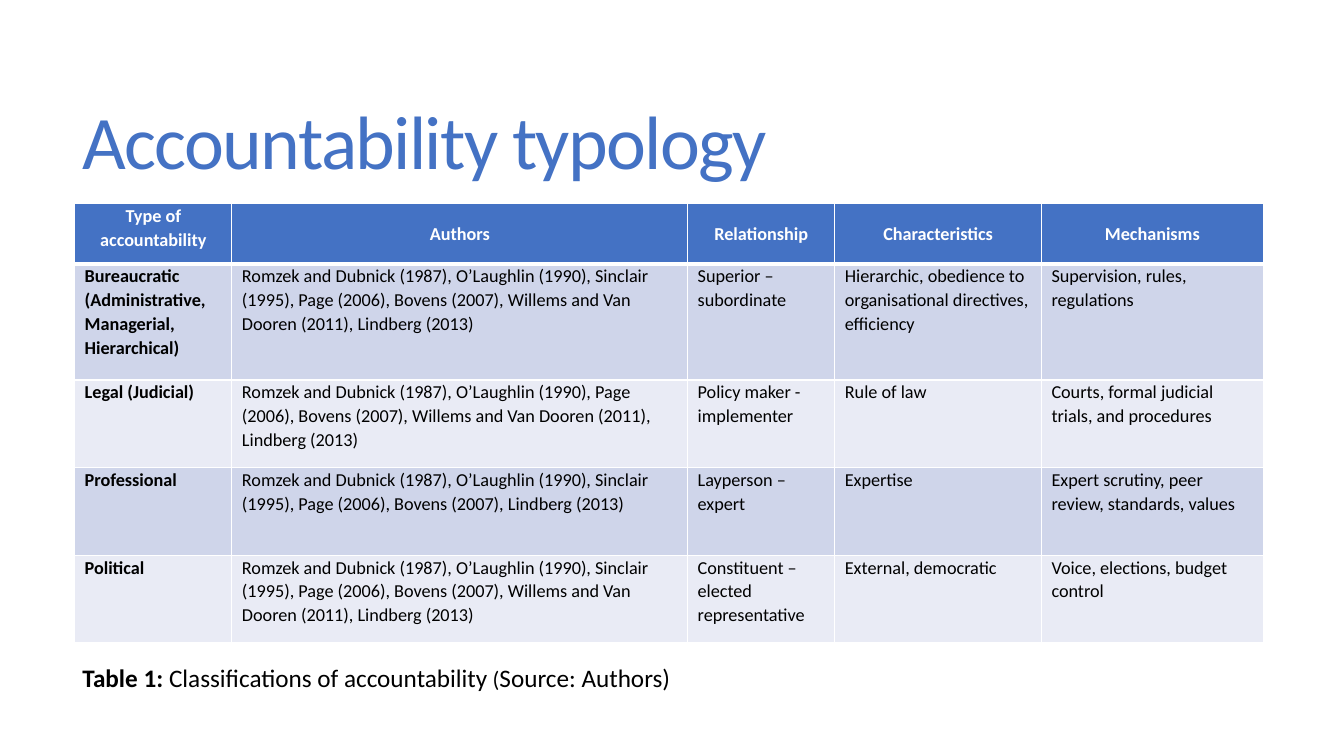
import pptx
import pptx.util
import pptx.dml.color
import pptx.enum.text
import pptx.oxml
import pptx.oxml.ns

Inches, Pt = pptx.util.Inches, pptx.util.Pt
Align, Anchor = pptx.enum.text.PP_ALIGN, pptx.enum.text.MSO_ANCHOR

COLORS = {"blue": "4472C4", "white": "FFFFFF", "black": "000000",
          "dark": "CFD5EA", "light": "E9EBF5"}


def rgb(name):
    return pptx.dml.color.RGBColor.from_string(COLORS[name])


def write(par, text, size=13, color="black", bold=False, track=0,
          line=1.07, after=8, align=None):
    """Add one run of text to a paragraph and set its format."""
    par.line_spacing, par.space_after = line, Pt(after)
    par.alignment = align
    run = par.add_run()
    run.text = text
    font = run.font
    font.name, font.size, font.bold = "Calibri", Pt(size), bold
    font.color.rgb = rgb(color)
    if track:
        run.font._element.set("spc", str(round(track * 100)))


class Deck:
    def __init__(self):
        self.file = pptx.Presentation()
        self.file.slide_width = Inches(13.33)
        self.file.slide_height = Inches(7.5)
        self.slide = self.file.slides.add_slide(self.file.slide_layouts[6])

    def text(self, box, runs, anchor=Anchor.TOP, **style):
        shape = self.slide.shapes.add_textbox(*map(Inches, box))
        frame = shape.text_frame
        frame.word_wrap, frame.vertical_anchor = True, anchor
        for words, extra in runs:
            write(frame.paragraphs[0], words, **{**style, **extra})

    def edges(self, cell, head):
        props = cell._tc.get_or_add_tcPr()
        for side in "LRTB":
            width = Pt(3 if head and side == "B" else 1)
            props.append(pptx.oxml.parse_xml(
                f'<a:ln{side} {pptx.oxml.ns.nsdecls("a")} w="{width}">'
                f'<a:solidFill><a:srgbClr val="{COLORS["white"]}"/>'
                f'</a:solidFill></a:ln{side}>'))

    def cell(self, cell, words, row, col):
        head = row == 0
        self.edges(cell, head)
        cell.fill.solid()
        cell.fill.fore_color.rgb = rgb(
            "blue" if head else "dark" if row % 2 else "light")
        cell.margin_left = cell.margin_right = Inches(0.1)
        cell.margin_top = cell.margin_bottom = 0
        cell.vertical_anchor = Anchor.MIDDLE if head and col else Anchor.TOP
        write(cell.text_frame.paragraphs[0], words,
              color="white" if head else "black", bold=head or col == 0,
              align=Align.CENTER if head else None)

    def table(self, left, top, widths, heights, rows):
        size = (left, top, sum(widths), sum(heights))
        grid = self.slide.shapes.add_table(
            len(heights), len(widths), *map(Inches, size)).table
        for col, width in zip(grid.columns, widths):
            col.width = Inches(width)
        for row, height in zip(grid.rows, heights):
            row.height = Inches(height)
        for r, row in enumerate(rows):
            for c, words in enumerate(row):
                self.cell(grid.cell(r, c), words, r, c)


ROWS = [
    ("Type of accountability", "Authors", "Relationship",
     "Characteristics", "Mechanisms"),
    ("Bureaucratic (Administrative, Managerial, Hierarchical)",
     "Romzek and Dubnick (1987), O’Laughlin (1990), Sinclair (1995), "
     "Page (2006), Bovens (2007), Willems and Van Dooren (2011), "
     "Lindberg (2013)",
     "Superior – subordinate",
     "Hierarchic, obedience to organisational directives, efficiency",
     "Supervision, rules, regulations"),
    ("Legal (Judicial)",
     "Romzek and Dubnick (1987), O’Laughlin (1990), Page (2006), "
     "Bovens (2007), Willems and Van Dooren (2011), Lindberg (2013)",
     "Policy maker - implementer", "Rule of law",
     "Courts, formal judicial trials, and procedures"),
    ("Professional",
     "Romzek and Dubnick (1987), O’Laughlin (1990), Sinclair (1995), "
     "Page (2006), Bovens (2007), Lindberg (2013)",
     "Layperson – expert", "Expertise",
     "Expert scrutiny, peer review, standards, values"),
    ("Political",
     "Romzek and Dubnick (1987), O’Laughlin (1990), Sinclair (1995), "
     "Page (2006), Bovens (2007), Willems and Van Dooren (2011), "
     "Lindberg (2013)",
     "Constituent – elected representative", "External, democratic",
     "Voice, elections, budget control"),
]


def main():
    deck = Deck()
    # Title
    deck.text((0.72, 0.55, 11.78, 1.81), [("Accountability typology", {})],
              anchor=Anchor.MIDDLE, size=54, color="blue", track=-1.2,
              line=0.85, after=0)
    # Typology table
    deck.table(0.74, 2.02, [1.56, 4.52, 1.46, 2.05, 2.2],
               [0.6, 1.15] + [0.87] * 3, ROWS)
    # Caption
    deck.text((0.72, 6.37, 6.67, 0.51),
              [("Table 1: ", {"bold": True}),
               ("Classifications of accountability", {}),
               (" (", {"size": 16}), ("Source: Authors)", {})],
              size=18, line=1.5)
    deck.file.save("out.pptx")


if __name__ == "__main__":
    main()
